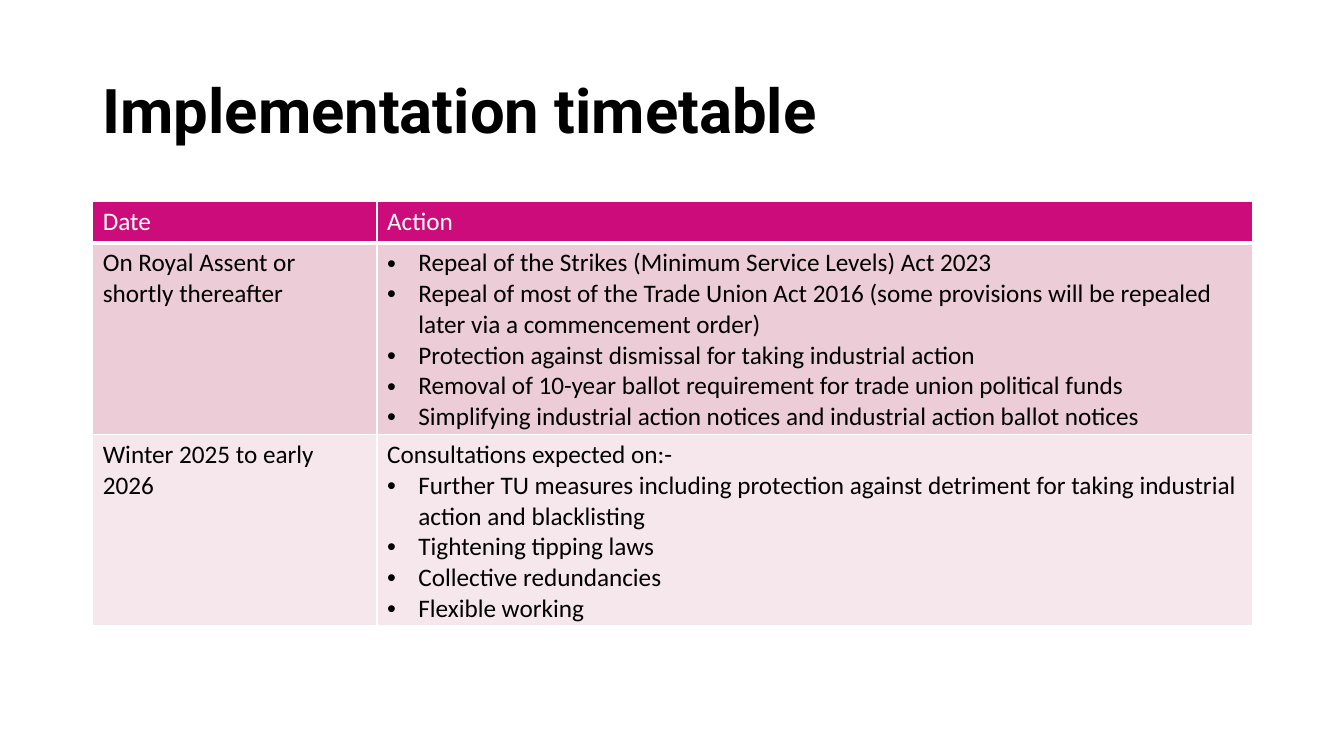
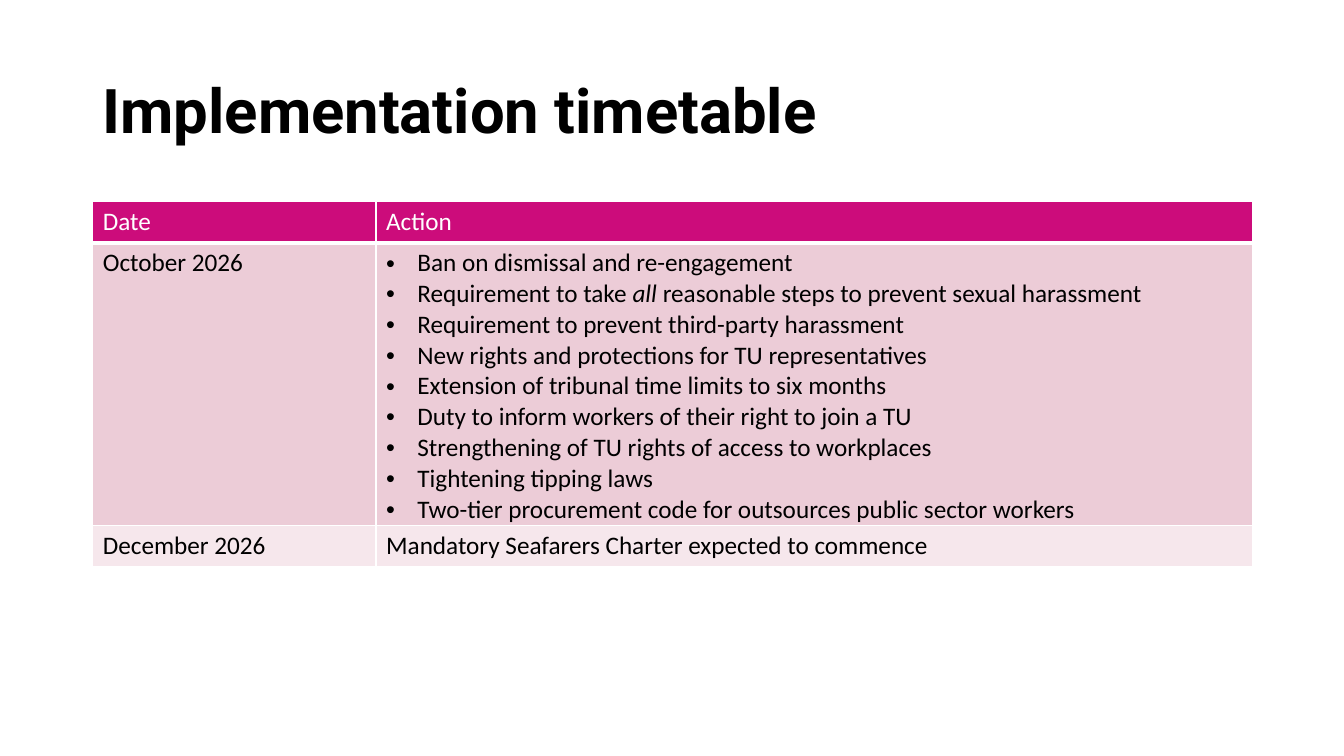
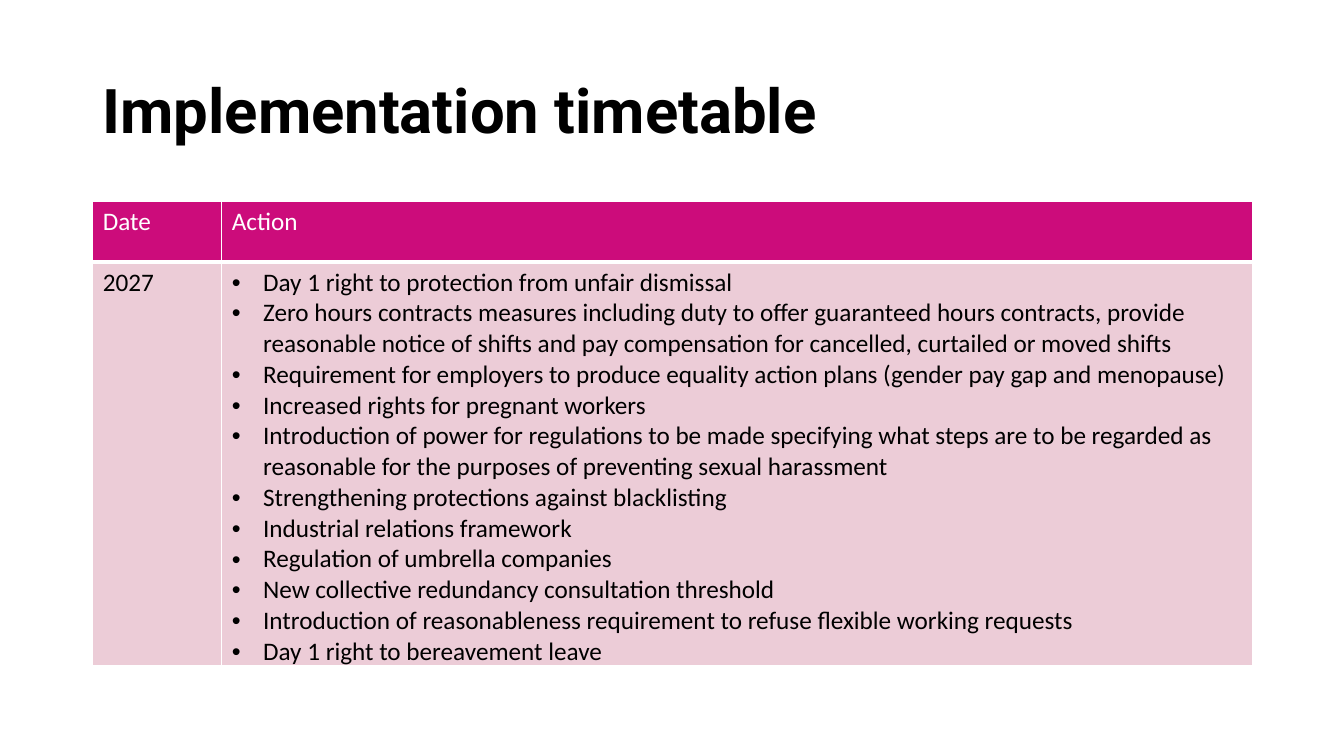
import pptx
import pptx.util
import pptx.dml.color
import pptx.enum.text
import pptx.oxml
import pptx.oxml.ns
from lxml import etree

Inches, Pt = pptx.util.Inches, pptx.util.Pt
RGBColor = pptx.dml.color.RGBColor

BLACK = RGBColor(0x00, 0x00, 0x00)
WHITE = RGBColor(0xFF, 0xFF, 0xFF)
MAGENTA = RGBColor(0xCC, 0x0C, 0x7B)
BANDS = RGBColor(0xEC, 0xCC, 0xD7), RGBColor(0xF6, 0xE7, 0xEC)

TITLE = "Implementation timetable"
HEADINGS = "Date", "Action"
TITLE_FONT, BODY_FONT = "Roboto", "Calibri"

LEFT, WIDTH = 0.92, 11.5
TITLE_TOP, TITLE_HEIGHT = 0.4, 1.45
TABLE_TOP, ROW_HEIGHT = 2, 0.41
BULLET_INDENT = 0.31

# Each row is (date, plain lines, bullets); in a tuple every second run is italic.
SLIDES = [
    {"date_width": 2.82, "header_height": ROW_HEIGHT, "rows": [
        ("On Royal Assent or shortly thereafter", [], [
            "Repeal of the Strikes (Minimum Service Levels) Act 2023",
            "Repeal of most of the Trade Union Act 2016 (some provisions will be "
            "repealed later via a commencement order)",
            "Protection against dismissal for taking industrial action",
            "Removal of 10-year ballot requirement for trade union political funds",
            "Simplifying industrial action notices and industrial action ballot notices",
        ]),
        ("Winter 2025 to early 2026", ["Consultations expected on:-"], [
            "Further TU measures including protection against detriment for taking "
            "industrial action and blacklisting",
            "Tightening tipping laws",
            "Collective redundancies",
            "Flexible working",
        ]),
    ]},
    {"date_width": 2.81, "header_height": ROW_HEIGHT, "rows": [
        ("October 2026", [], [
            "Ban on dismissal and re-engagement",
            ("Requirement to take ", "all ",
             "reasonable steps to prevent sexual harassment"),
            "Requirement to prevent third-party harassment",
            "New rights and protections for TU representatives",
            "Extension of tribunal time limits to six months",
            "Duty to inform workers of their right to join a TU",
            "Strengthening of TU rights of access to workplaces",
            "Tightening tipping laws",
            "Two-tier procurement code for outsources public sector workers",
        ]),
        ("December 2026", ["Mandatory Seafarers Charter expected to commence"], []),
    ]},
    {"date_width": 1.28, "header_height": 0.6, "rows": [
        ("2027", [], [
            "Day 1 right to protection from unfair dismissal",
            "Zero hours contracts measures including duty to offer guaranteed hours "
            "contracts, provide reasonable notice of shifts and pay compensation for "
            "cancelled, curtailed or moved shifts",
            "Requirement for employers to produce equality action plans (gender pay "
            "gap and menopause)",
            "Increased rights for pregnant workers",
            "Introduction of power for regulations to be made specifying what steps "
            "are to be regarded as reasonable for the purposes of preventing sexual "
            "harassment",
            "Strengthening protections against blacklisting",
            "Industrial relations framework",
            "Regulation of umbrella companies",
            "New collective redundancy consultation threshold",
            "Introduction of reasonableness requirement to refuse flexible working "
            "requests",
            "Day 1 right to bereavement leave",
        ]),
    ]},
]


def add_child(parent, tag, **attrs):
    return etree.SubElement(parent, pptx.oxml.ns.qn(tag), **attrs)


def add_run(p, text, font, size, color, bold=False, italic=False):
    r = p.add_run()
    r.text = text
    r.font.name, r.font.size = font, Pt(size)
    r.font.bold, r.font.italic = bold, italic
    r.font.color.rgb = color


def add_bullet(p):
    pPr = p._p.get_or_add_pPr()
    indent = Inches(BULLET_INDENT)
    pPr.set("marL", str(indent))
    pPr.set("indent", str(-indent))
    add_child(pPr, "a:buFont", typeface="Arial")
    add_child(pPr, "a:buChar", char="•")


def add_borders(cell, bottom):
    tcPr = cell._tc.get_or_add_tcPr()
    for side, width in (("L", 1), ("R", 1), ("T", 1), ("B", bottom)):
        ln = add_child(tcPr, "a:ln" + side, w=str(Pt(width)))
        add_child(add_child(ln, "a:solidFill"), "a:srgbClr", val=str(WHITE))


def fill_cell(cell, fill, color, lines, bullets=(), bottom=1):
    add_borders(cell, bottom)
    cell.fill.solid()
    cell.fill.fore_color.rgb = fill
    tf = cell.text_frame
    for i, content in enumerate([*lines, *bullets]):
        p = tf.add_paragraph() if i else tf.paragraphs[0]
        if i >= len(lines):
            add_bullet(p)
        runs = (content,) if isinstance(content, str) else content
        for k, text in enumerate(runs):
            add_run(p, text, BODY_FONT, 18, color, italic=k % 2 == 1)


def add_title(s):
    sp = s.shapes.add_textbox(Inches(LEFT), Inches(TITLE_TOP),
                              Inches(WIDTH), Inches(TITLE_HEIGHT))
    tf = sp.text_frame
    tf.word_wrap = True
    tf.vertical_anchor = pptx.enum.text.MSO_ANCHOR.MIDDLE
    p = tf.paragraphs[0]
    p.line_spacing = 0.9
    add_run(p, TITLE, TITLE_FONT, 44, BLACK, bold=True)


def add_timetable(s, date_width, header_height, rows):
    heights = [header_height] + [ROW_HEIGHT] * len(rows)
    table = s.shapes.add_table(len(heights), len(HEADINGS), Inches(LEFT),
                               Inches(TABLE_TOP), Inches(WIDTH),
                               Inches(sum(heights))).table
    for column, width in zip(table.columns, (date_width, WIDTH - date_width)):
        column.width = Inches(width)
    for row, height in zip(table.rows, heights):
        row.height = Inches(height)
    for c, heading in enumerate(HEADINGS):
        fill_cell(table.cell(0, c), MAGENTA, WHITE, [heading], bottom=3)
    for n, (date, lines, bullets) in enumerate(rows):
        band = BANDS[n % len(BANDS)]
        fill_cell(table.cell(n + 1, 0), band, BLACK, [date])
        fill_cell(table.cell(n + 1, 1), band, BLACK, lines, bullets)


def main():
    prs = pptx.Presentation()
    prs.slide_width, prs.slide_height = Inches(13.33), Inches(7.5)
    for timetable in SLIDES:
        s = prs.slides.add_slide(prs.slide_layouts[6])
        add_title(s)
        add_timetable(s, **timetable)
    prs.save("out.pptx")


if __name__ == "__main__":
    main()
